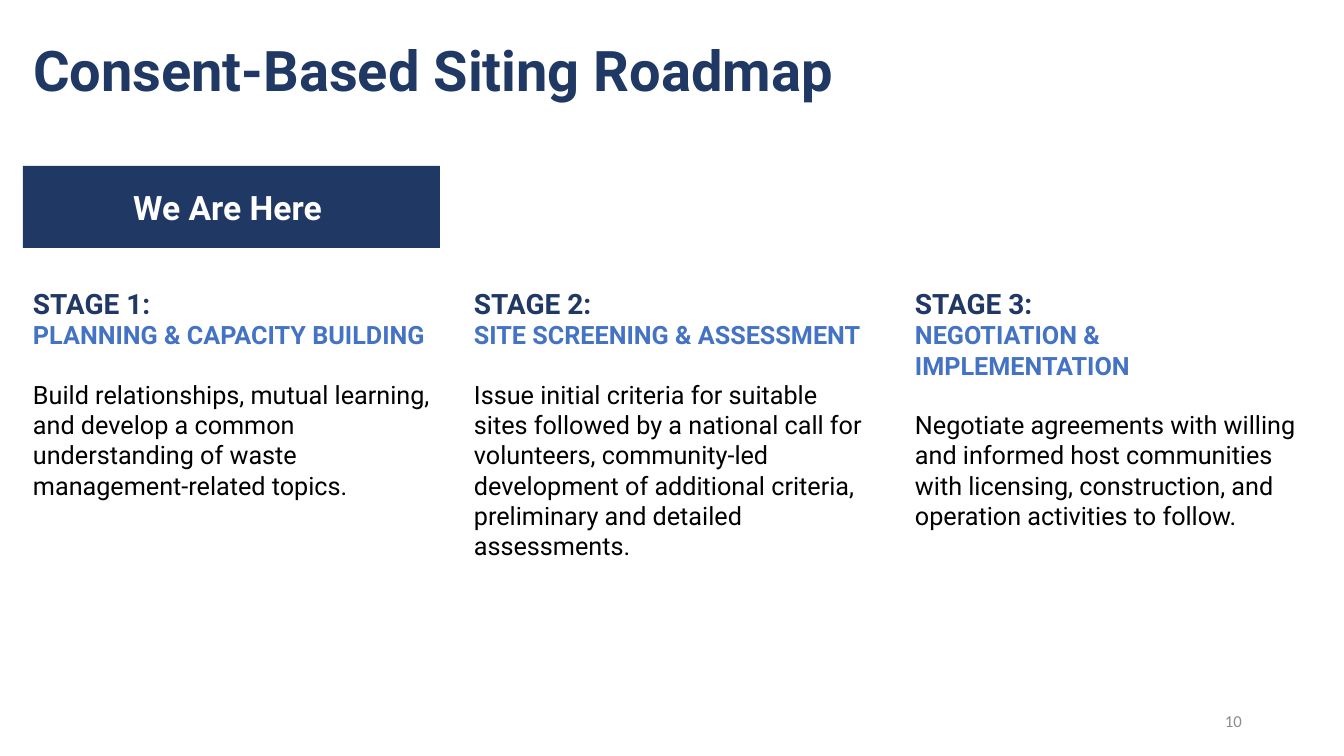
import lxml.etree
import pptx
import pptx.dml.color
import pptx.enum.shapes
import pptx.enum.text
import pptx.oxml.ns
import pptx.util

EMU_PER_PX = 12192000 / 1344
NAVY, BLUE, BLACK, WHITE, GRAY = "203864", "4472C4", "000000", "FFFFFF", "8C8C8C"
ANCHOR = pptx.enum.text.MSO_ANCHOR
ALIGN = pptx.enum.text.PP_ALIGN

COLUMN_LEFT, COLUMN_STEP, COLUMN_WIDTH = 23, 441, 417
BANNER_TOP, BANNER_HEIGHT = 166, 82
STAGE_HEIGHT = 353

STAGE_FORMATS = [
    {"size": 20, "color": NAVY, "bold": True},
    {"size": 18, "color": BLUE, "bold": True},
    {"size": 18, "color": BLACK, "space_before": 21},
]
STAGES = [
    ("PLANNING & CAPACITY BUILDING",
     "Build relationships, mutual learning, and develop a common understanding "
     "of waste management-related topics."),
    ("SITE SCREENING & ASSESSMENT",
     "Issue initial criteria for suitable sites followed by a national call for "
     "volunteers, community-led development of additional criteria, preliminary "
     "and detailed assessments."),
    ("NEGOTIATION & IMPLEMENTATION",
     "Negotiate agreements with willing and informed host communities with "
     "licensing, construction, and operation activities to follow."),
]


def px(length):
    """Turn a pixel length into EMU."""
    return pptx.util.Emu(round(length * EMU_PER_PX))


def rgb(color):
    """Turn a hex string into a colour."""
    return pptx.dml.color.RGBColor.from_string(color)


def set_attributes(target, values):
    """Set each attribute of the target from a dict."""
    for name, value in values.items():
        setattr(target, name, value)


def place(shape, left, top, width, height):
    """Move and size a shape in pixels."""
    set_attributes(shape, {"left": px(left), "top": px(top),
                           "width": px(width), "height": px(height)})


def set_frame(shape, anchor, left=10, top=5, right=10):
    """Set the wrapping, anchor and margins of a text frame."""
    set_attributes(shape.text_frame, {
        "word_wrap": True, "auto_size": pptx.enum.text.MSO_AUTO_SIZE.NONE,
        "vertical_anchor": anchor, "margin_left": px(left), "margin_top": px(top),
        "margin_right": px(right), "margin_bottom": px(5)})


def write(paragraph, text, size, color, bold=False, font="Roboto",
          align=ALIGN.LEFT, space_before=0, line_spacing=1.0):
    """Write one formatted run into a paragraph."""
    set_attributes(paragraph, {"alignment": align, "line_spacing": line_spacing,
                               "space_before": pptx.util.Pt(space_before)})
    run = paragraph.add_run()
    run.text = text
    set_attributes(run.font, {"name": font, "size": pptx.util.Pt(size), "bold": bold})
    run.font.color.rgb = rgb(color)


def add_box(slide, left, top, width, height, color, opacity=100):
    """Add a borderless filled rectangle."""
    shape = slide.shapes.add_shape(pptx.enum.shapes.MSO_SHAPE.RECTANGLE,
                                   px(left), px(top), px(width), px(height))
    shape.shadow.inherit = False
    shape.fill.solid()
    shape.fill.fore_color.rgb = rgb(color)
    shape.line.fill.background()
    if opacity < 100:
        fill_color = shape.fill._xPr.find(".//" + pptx.oxml.ns.qn("a:srgbClr"))
        alpha = lxml.etree.SubElement(fill_color, pptx.oxml.ns.qn("a:alpha"))
        alpha.set("val", str(opacity * 1000))
    return shape


def add_title(slide, text):
    """Fill and place the title placeholder."""
    title = slide.shapes.title
    place(title, 23, 0, 1159, 146)
    set_frame(title, ANCHOR.MIDDLE)
    write(title.text_frame.paragraphs[0], text, 40, NAVY, bold=True, line_spacing=0.9)


def add_stage(slide, index, heading, description):
    """Add one stage column."""
    box = add_box(slide, COLUMN_LEFT + index * COLUMN_STEP, BANNER_TOP + BANNER_HEIGHT,
                  COLUMN_WIDTH, STAGE_HEIGHT, WHITE, opacity=94)
    set_frame(box, ANCHOR.TOP, top=38)
    frame = box.text_frame
    texts = [f"STAGE {index + 1}:", heading, description]
    for row, (text, values) in enumerate(zip(texts, STAGE_FORMATS)):
        paragraph = frame.add_paragraph() if row else frame.paragraphs[0]
        write(paragraph, text, **values)


def add_banner(slide, text):
    """Add the marker above the current stage."""
    banner = add_box(slide, COLUMN_LEFT, BANNER_TOP, COLUMN_WIDTH, BANNER_HEIGHT, NAVY)
    set_frame(banner, ANCHOR.MIDDLE, right=18)
    write(banner.text_frame.paragraphs[0], text, 24, WHITE, bold=True, align=ALIGN.CENTER)


def add_page_number(slide, text):
    """Add the page number at the lower right."""
    box = slide.shapes.add_textbox(px(950), px(701), px(302), px(40))
    set_frame(box, ANCHOR.MIDDLE)
    write(box.text_frame.paragraphs[0], text, 12, GRAY, font="Calibri", align=ALIGN.RIGHT)


def main():
    """Build and save the roadmap slide."""
    presentation = pptx.Presentation()
    set_attributes(presentation, {"slide_width": px(1344), "slide_height": px(756)})
    slide = presentation.slides.add_slide(presentation.slide_layouts[5])
    add_page_number(slide, "10")
    add_title(slide, "Consent-Based Siting Roadmap")
    for index, (heading, description) in enumerate(STAGES):
        add_stage(slide, index, heading, description)
    add_banner(slide, "We Are Here")
    presentation.save("out.pptx")


if __name__ == "__main__":
    main()
